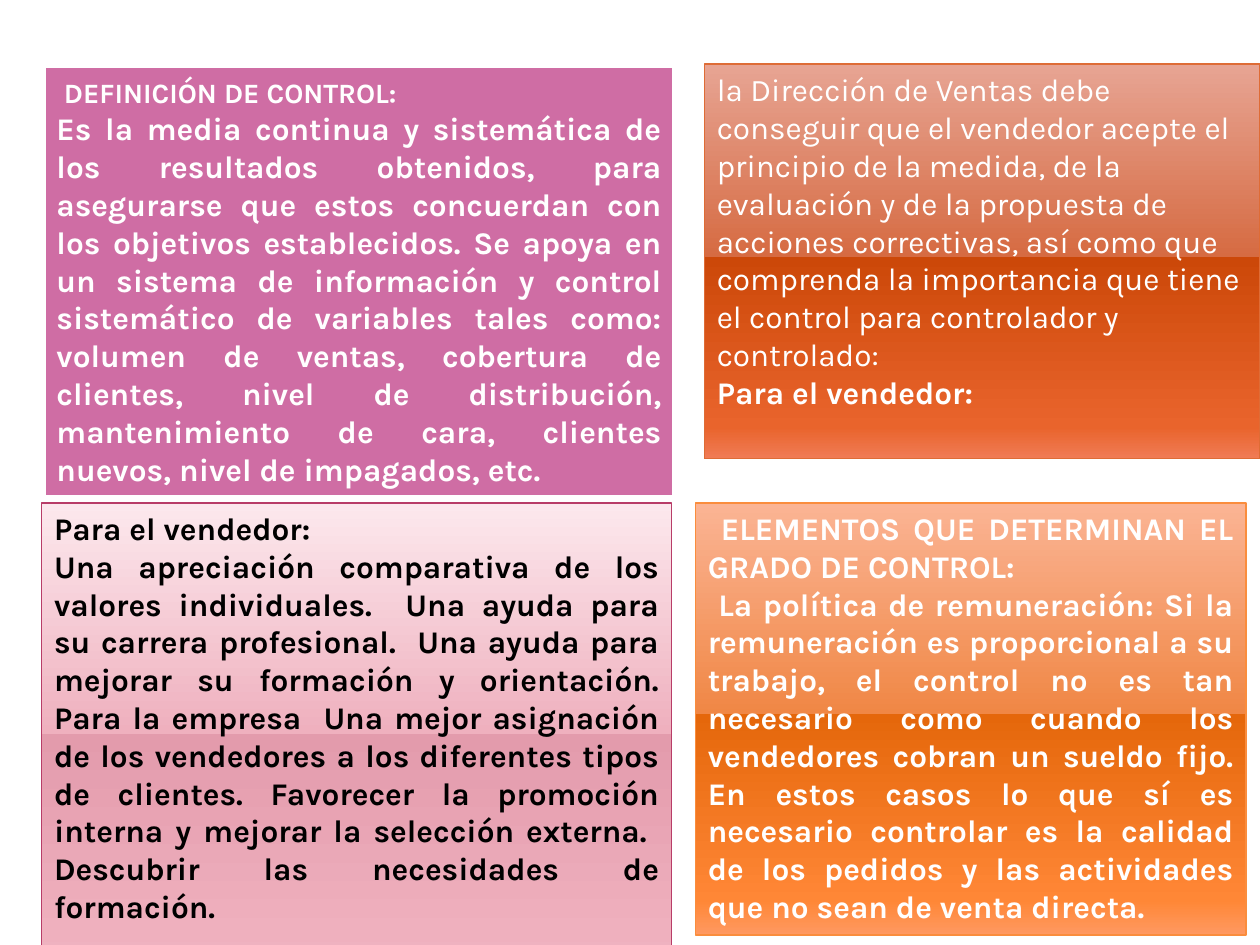
"""Build a slide with four coloured panels about sales control."""
from lxml import etree
from pptx import Presentation
from pptx import util as u
from pptx.dml.color import RGBColor
from pptx.enum import shapes, text
from pptx.oxml.ns import qn

WHITE = RGBColor(0xFF, 0xFF, 0xFF)
BLACK = RGBColor(0x00, 0x00, 0x00)
ORCHID = RGBColor(0xCF, 0x6D, 0xA4)
RUST = RGBColor(0xDE, 0x6C, 0x36)
ROSE = RGBColor(0xB8, 0x3D, 0x68)
ORANGE = RGBColor(0xFA, 0x8D, 0x3D)
RUST_STOPS = [RGBColor.from_string(c) for c in ("E7A493", "D66B42", "CC4809", "E9642C", "F07B55")]
ROSE_STOPS = [RGBColor.from_string(c) for c in ("FCE8ED", "EFB0BE", "E39BAC", "EFB0BE", "F0BEC9")]
ORANGE_STOPS = [RGBColor.from_string(c) for c in ("FBB494", "F08745", "E5670B", "FF8736", "FF9961")]
STOP_POSITIONS = (0, 49, 49, 92, 100)


def add_run(paragraph, content, size=18, bold=True, color=WHITE):
    run = paragraph.add_run()
    run.text = content
    run.font.name = "Karla"
    run.font.size = u.Pt(size)
    run.font.bold = bold
    run.font.color.rgb = color


def fill_gradient(shape, colors):
    shape.fill.gradient()
    shape.fill.gradient_angle = 270
    stop_list = shape._element.spPr.find(qn("a:gradFill")).find(qn("a:gsLst"))
    for stop in list(stop_list):
        stop_list.remove(stop)
    for position, color in zip(STOP_POSITIONS, colors):
        stop = etree.SubElement(stop_list, qn("a:gs"), pos=str(position * 1000))
        etree.SubElement(stop, qn("a:srgbClr"), val=str(color))


presentation = Presentation()
presentation.slide_width = u.Pt(720)
presentation.slide_height = u.Pt(540)
slide = presentation.slides.add_slide(presentation.slide_layouts[6])

JUSTIFY = text.PP_ALIGN.JUSTIFY
LEFT = text.PP_ALIGN.LEFT
panels = [
    ((25.2, 37.4, 360, 247), [ORCHID], WHITE, 2.5, JUSTIFY, [
        [(" ", {"bold": False}), ("DEFINICIÓN DE CONTROL: ", {"size": 16})],
        [("Es la media continua y sistemática de los resultados obtenidos, para "
          "asegurarse que estos concuerdan con los objetivos establecidos. Se apoya "
          "en un sistema de información y control sistemático de variables tales "
          "como: volumen de ventas, cobertura de clientes, nivel de distribución, "
          "mantenimiento de cara, clientes nuevos, nivel de impagados, etc.", {})],
    ]),
    ((402.5, 36.7, 317.5, 225.4), RUST_STOPS, RUST, 0.9, LEFT, [
        [("la Dirección de Ventas debe conseguir que el vendedor acepte el principio "
          "de la medida, de la evaluación y de la propuesta de acciones correctivas, "
          "así como que comprenda la importancia que tiene el control para "
          "controlador y controlado:", {"bold": False})],
        [("Para el vendedor:", {})],
    ]),
    ((23.8, 287.3, 360, 269.3), ROSE_STOPS, ROSE, 0.9, JUSTIFY, [
        [("Para el vendedor:", {"color": BLACK})],
        [("Una apreciación comparativa de los valores individuales.  Una ayuda para "
          "su carrera profesional.  Una ayuda para mejorar su formación y "
          "orientación. Para la empresa  Una mejor asignación de los vendedores a "
          "los diferentes tipos de clientes. Favorecer la promoción interna y "
          "mejorar la selección externa.  Descubrir las necesidades de formación. ",
          {"color": BLACK})],
    ]),
    ((397.4, 287.3, 314.6, 247), ORANGE_STOPS, ORANGE, 0.9, JUSTIFY, [
        [(" ELEMENTOS QUE DETERMINAN EL GRADO DE CONTROL:", {})],
        [(" La política de remuneración: Si la remuneración es proporcional a su "
          "trabajo, el control no es tan necesario como cuando los vendedores "
          "cobran un sueldo fijo. En estos casos lo que sí es necesario controlar "
          "es la calidad de los pedidos y las actividades que no sean de venta "
          "directa. ", {})],
    ]),
]

for bounds, fill_colors, line_color, line_width, alignment, paragraphs in panels:
    shape = slide.shapes.add_shape(shapes.MSO_SHAPE.RECTANGLE, *map(u.Pt, bounds))
    shape.shadow.inherit = False
    if len(fill_colors) == 1:
        shape.fill.solid()
        shape.fill.fore_color.rgb = fill_colors[0]
    else:
        fill_gradient(shape, fill_colors)
    shape.line.color.rgb = line_color
    shape.line.width = u.Pt(line_width)
    frame = shape.text_frame
    frame.word_wrap = True
    frame.vertical_anchor = text.MSO_ANCHOR.TOP
    for index, runs in enumerate(paragraphs):
        paragraph = frame.add_paragraph() if index else frame.paragraphs[0]
        paragraph.alignment = alignment
        for content, style in runs:
            add_run(paragraph, content, **style)

presentation.save("out.pptx")
